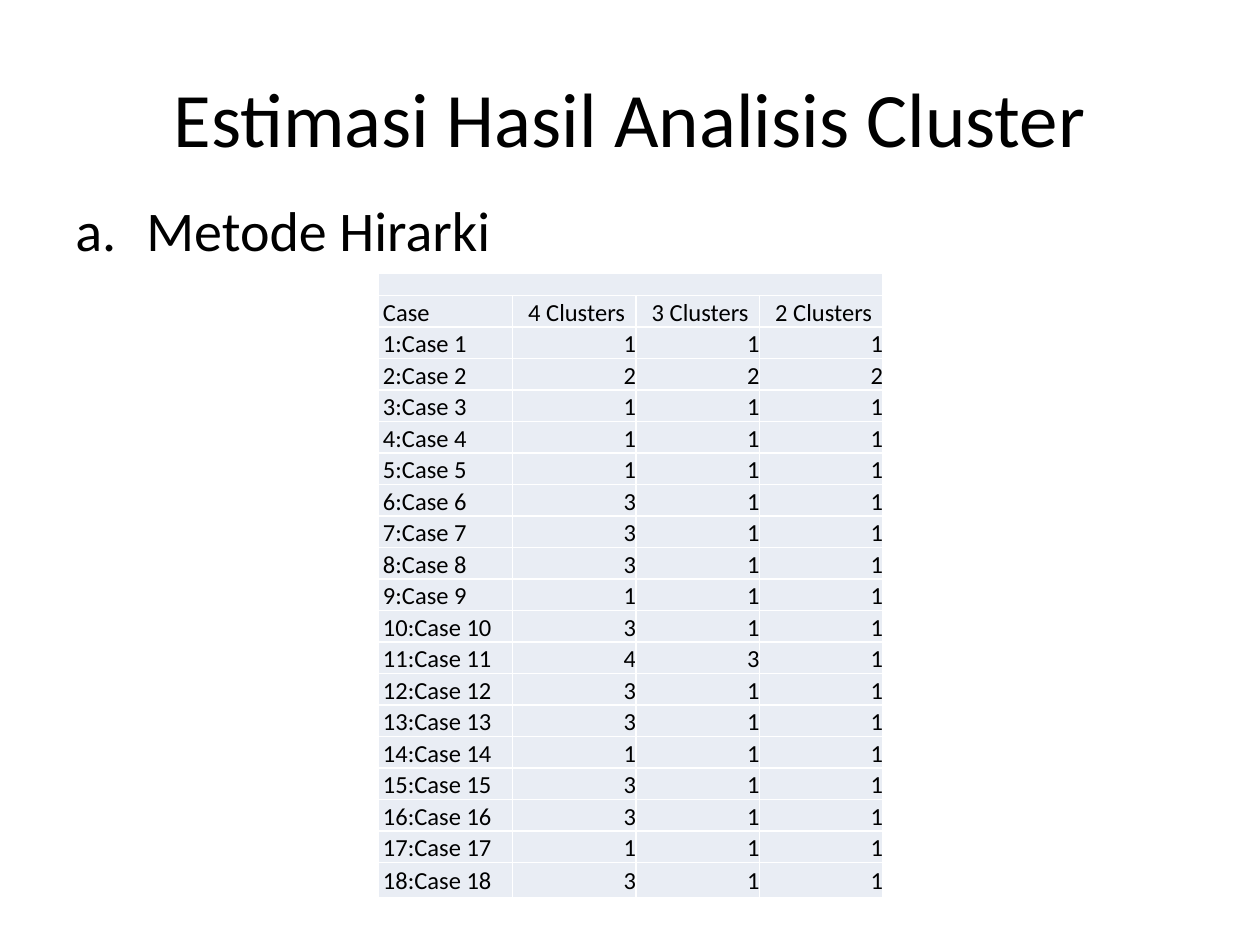
from lxml import etree
from pptx import Presentation
from pptx.dml.color import RGBColor
from pptx.enum import text
from pptx.oxml.ns import qn
from pptx.util import Cm, Pt

COLORS = {"text": "000000", "cell": "E9EDF4", "border": "FFFFFF"}
FONT = "Calibri"
LEFT, CENTER, RIGHT = text.PP_ALIGN.LEFT, text.PP_ALIGN.CENTER, text.PP_ALIGN.RIGHT
TOP, MIDDLE = text.MSO_ANCHOR.TOP, text.MSO_ANCHOR.MIDDLE

TITLE = "Estimasi Hasil Analisis Cluster"
METHOD = "Metode Hirarki"
HEADERS = ["Case", "4 Clusters", "3 Clusters", "2 Clusters"]
# Cluster membership of each case in the 4, 3 and 2 cluster solutions
MEMBERSHIPS = [
    (1, 1, 1), (2, 2, 2), (1, 1, 1), (1, 1, 1), (1, 1, 1), (3, 1, 1),
    (3, 1, 1), (3, 1, 1), (1, 1, 1), (3, 1, 1), (4, 3, 1), (3, 1, 1),
    (3, 1, 1), (1, 1, 1), (3, 1, 1), (3, 1, 1), (1, 1, 1), (3, 1, 1),
]

COLUMN_WIDTHS = [Cm(2.71)] + [Cm(2.49)] * 3
ROW_HEIGHT, LAST_ROW_HEIGHT = Cm(0.45), Cm(0.7)


def write(frame, content, size, align=LEFT, indent=0, hanging=0, number=None, spacing=None):
    paragraph = frame.paragraphs[0]
    paragraph.alignment = align
    properties = paragraph._p.get_or_add_pPr()
    properties.set("marL", str(indent))
    properties.set("indent", str(-hanging))
    if spacing:
        paragraph.line_spacing = spacing
    if number:
        etree.SubElement(properties, qn("a:buFont"), typeface="+mj-lt")
        etree.SubElement(properties, qn("a:buAutoNum"), type=number)
    run = paragraph.add_run()
    run.text = content
    run.font.name = FONT
    run.font.size = Pt(size)
    run.font.color.rgb = RGBColor.from_string(COLORS["text"])


def format_cell(cell):
    cell.margin_left = cell.margin_right = cell.margin_top = cell.margin_bottom = 0
    properties = cell._tc.get_or_add_tcPr()
    for side in ("lnL", "lnR", "lnT", "lnB"):
        line = etree.SubElement(properties, qn(f"a:{side}"), w=str(Pt(1)))
        fill = etree.SubElement(line, qn("a:solidFill"))
        etree.SubElement(fill, qn("a:srgbClr"), val=COLORS["border"])
    cell.fill.solid()
    cell.fill.fore_color.rgb = RGBColor.from_string(COLORS["cell"])


def add_cluster_table(slide):
    cases = [(f"{n}:Case {n}", *clusters) for n, clusters in enumerate(MEMBERSHIPS, 1)]
    rows = [HEADERS] + cases
    shape = slide.shapes.add_table(len(rows) + 1, len(HEADERS), Cm(7.62), Cm(5.51),
                                   sum(COLUMN_WIDTHS), Cm(12.57))
    table = shape.table
    table.first_row = table.horz_banding = False
    for column, width in zip(table.columns, COLUMN_WIDTHS):
        column.width = width
    for row in table.rows:
        row.height = ROW_HEIGHT
    table.rows[len(rows)].height = LAST_ROW_HEIGHT
    for cell in table.iter_cells():
        format_cell(cell)

    # The empty top row stays low only with a small paragraph-end size
    for cell in table.rows[0].cells:
        end = cell.text_frame.paragraphs[0]._p.get_or_add_endParaRPr()
        end.set("sz", "1000")
    table.cell(0, 0).merge(table.cell(0, len(HEADERS) - 1))

    for r, values in enumerate(rows, 1):
        is_header = values is HEADERS
        for c, value in enumerate(values):
            cell = table.cell(r, c)
            cell.vertical_anchor = TOP if is_header else MIDDLE
            align = LEFT if c == 0 else CENTER if is_header else RIGHT
            write(cell.text_frame, str(value), 14, align=align, indent=Cm(0.1), spacing=1.07)


def main():
    presentation = Presentation()
    presentation.slide_width, presentation.slide_height = Cm(25.4), Cm(19.05)
    slide = presentation.slides.add_slide(presentation.slide_layouts[5])

    title = slide.shapes.title
    title.left, title.top, title.width, title.height = Cm(1.27), Cm(0.76), Cm(22.86), Cm(3.18)
    title.text_frame.vertical_anchor = MIDDLE
    write(title.text_frame, TITLE, 44, align=CENTER)

    body = slide.shapes.add_textbox(Cm(1.27), Cm(3.81), Cm(22.86), Cm(13.2))
    body.text_frame.word_wrap = True
    write(body.text_frame, METHOD, 32, indent=Cm(1.43), hanging=Cm(1.43),
          number="alphaLcPeriod")

    add_cluster_table(slide)
    presentation.save("out.pptx")


if __name__ == "__main__":
    main()
